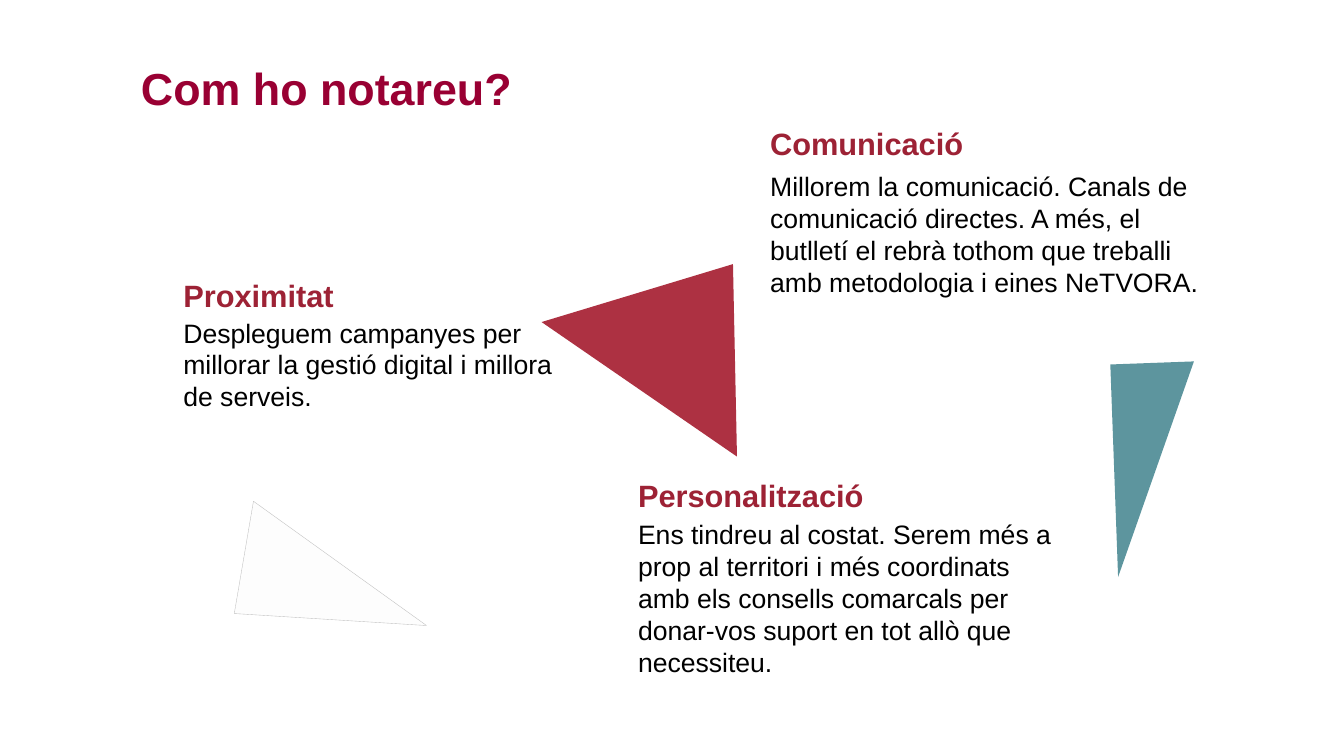
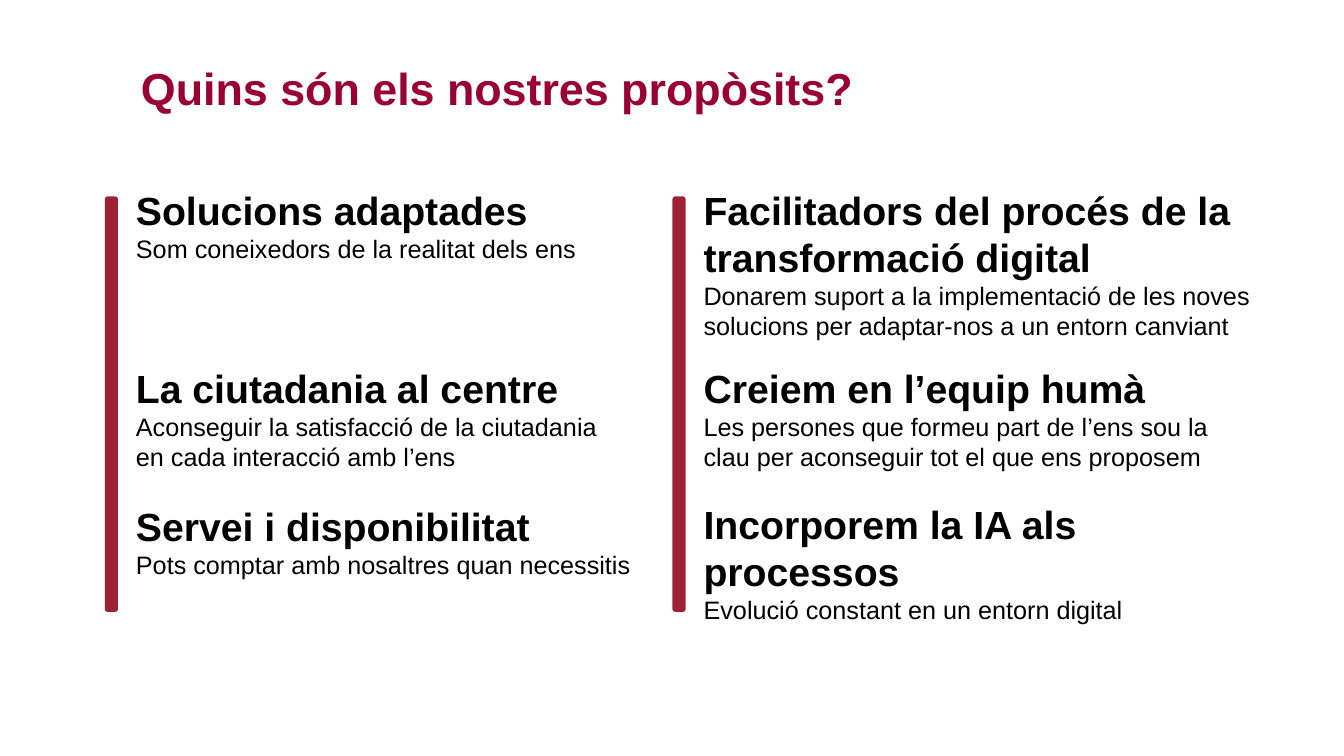
"""Build two slides on how the service is noticed and what it aims for."""
from dataclasses import dataclass

from pptx import Presentation
from pptx.dml.color import RGBColor
from pptx.enum.shapes import MSO_SHAPE
from pptx.util import Inches, Pt

FONT = "Arial"
TITLE, RED, BLACK = "990033", "9D2235", "000000"
BAR_TOP, BAR_WIDE, BAR_HIGH = 1.96, 0.11, 4.1
BARS = (1.05, 6.68)


@dataclass
class Line:
    text: str
    size: int
    color: str = BLACK
    bold: bool = False


@dataclass
class Topic:
    head: str
    body: str
    left: float
    top: float
    wide: float
    high: float


@dataclass
class Wedge:
    left: float
    top: float
    wide: float
    high: float
    turn: float
    apex: float
    fill: str
    edge: str = ""


TOPICS = [
    Topic("Comunicació",
          "Millorem la comunicació. Canals de comunicació directes. A més, el "
          "butlletí el rebrà tothom que treballi amb metodologia i eines NeTVORA.",
          7.54, 1.64, 4.71, 1.38),
    Topic("Proximitat",
          "Despleguem campanyes per millorar la gestió digital i millora de serveis.",
          1.72, 3.09, 4.01, 1.38),
    Topic("Personalització",
          "Ens tindreu al costat. Serem més a prop al territori i més coordinats "
          "amb els consells comarcals per donar-vos suport en tot allò que necessiteu.",
          6.23, 5.09, 4.38, 2.02),
]
HEAD_TOPS = (1.19, 2.7, 4.68)

WEDGES = [
    Wedge(5.38, 2.64, 1.91, 1.91, 268.8, 0.72, "AD3142"),
    Wedge(11.05, 3.6, 0.83, 2.11, 177.9, 1, "5D959E"),
    Wedge(2.79, 4.74, 1.13, 1.9, 99.7, 0.82, "FDFDFD", "BFBFBF"),
]

GOALS = [
    Topic("Solucions adaptades", "Som coneixedors de la realitat dels ens",
          1.25, 1.8, 4.61, 0.88),
    Topic("La ciutadania al centre",
          "Aconseguir la satisfacció de la ciutadania en cada interacció amb l’ens",
          1.25, 3.56, 4.87, 1.18),
    Topic("Servei i disponibilitat", "Pots comptar amb nosaltres quan necessitis",
          1.25, 4.93, 5.15, 1.18),
    Topic("Facilitadors del procés de la transformació digital",
          "Donarem suport a la implementació de les noves solucions per "
          "adaptar-nos a un entorn canviant",
          6.88, 1.8, 5.64, 1.65),
    Topic("Creiem en l’equip humà",
          "Les persones que formeu part de l’ens sou la clau per aconseguir "
          "tot el que ens proposem",
          6.88, 3.56, 5.22, 1.18),
    Topic("Incorporem la IA als processos", "Evolució constant en un entorn digital",
          6.88, 4.91, 4.99, 1.35),
]


def paint(form, color: str) -> None:
    form.solid()
    form.fore_color.rgb = RGBColor.from_string(color)


def write(slide, left: float, top: float, wide: float, high: float,
          *lines: Line) -> None:
    box = slide.shapes.add_textbox(Inches(left), Inches(top), Inches(wide), Inches(high))
    frame = box.text_frame
    frame.word_wrap = True
    for rank, line in enumerate(lines):
        para = frame.add_paragraph() if rank else frame.paragraphs[0]
        para.text = line.text
        font = para.font
        font.name, font.size, font.bold = FONT, Pt(line.size), line.bold
        font.color.rgb = RGBColor.from_string(line.color)


def shape(slide, kind: MSO_SHAPE, left: float, top: float, wide: float,
          high: float, fill: str, edge: str = "", weight: float = 0.25):
    item = slide.shapes.add_shape(
        kind, Inches(left), Inches(top), Inches(wide), Inches(high))
    item.shadow.inherit = False
    paint(item.fill, fill)
    if edge:
        paint(item.line.fill, edge)
        item.line.width = Pt(weight)
    else:
        item.line.fill.background()
    return item


def start(deck, title: str):
    slide = deck.slides.add_slide(deck.slide_layouts[6])
    write(slide, 1.3, 0.55, 8.7, 0.64, Line(title, 32, TITLE, True))
    return slide


def notice(deck) -> None:
    slide = start(deck, "Com ho notareu?")
    for topic, top in zip(TOPICS, HEAD_TOPS):
        write(slide, topic.left, topic.top, topic.wide, topic.high,
              Line(topic.body, 19))
        write(slide, topic.left, top, 2.61, 0.47, Line(topic.head, 22, RED, True))
    for wedge in WEDGES:
        item = shape(slide, MSO_SHAPE.ISOSCELES_TRIANGLE, wedge.left, wedge.top,
                     wedge.wide, wedge.high, wedge.fill, wedge.edge)
        item.rotation = wedge.turn
        item.adjustments[0] = wedge.apex


def goals(deck) -> None:
    slide = start(deck, "Quins són els nostres propòsits?")
    for goal in GOALS:
        write(slide, goal.left, goal.top, goal.wide, goal.high,
              Line(goal.head, 28, bold=True), Line(goal.body, 18))
    for left in BARS:
        shape(slide, MSO_SHAPE.ROUNDED_RECTANGLE, left, BAR_TOP, BAR_WIDE,
              BAR_HIGH, RED, RED, 1.5)


def main() -> None:
    deck = Presentation()
    deck.slide_width, deck.slide_height = Inches(13.33), Inches(7.5)
    notice(deck)
    goals(deck)
    deck.save("out.pptx")


if __name__ == "__main__":
    main()
